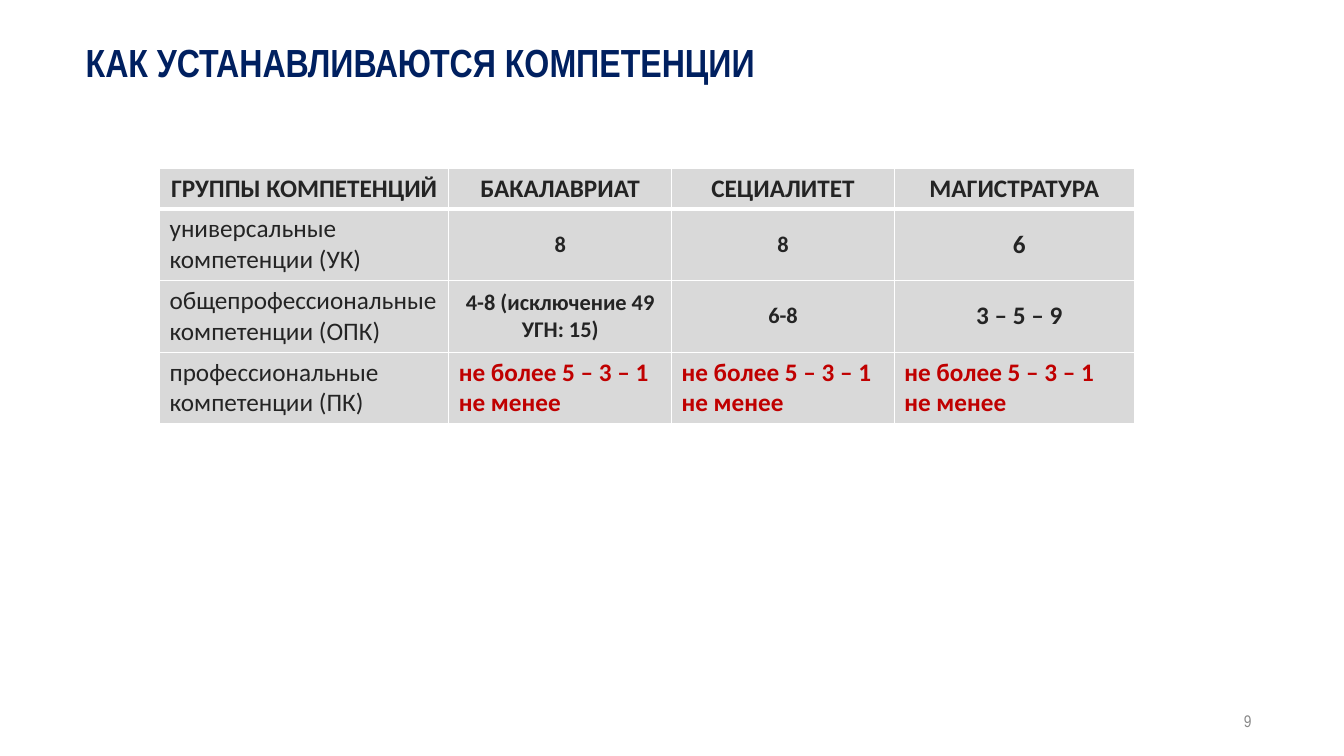
from dataclasses import dataclass
from typing import Any

from lxml.etree import SubElement
from pptx import Presentation
from pptx.dml.color import RGBColor
from pptx.enum.text import MSO_ANCHOR, MSO_AUTO_SIZE, PP_ALIGN
from pptx.oxml.ns import qn
from pptx.util import Emu, Inches, Pt

COLS, ROWS = 160, 90
WIDE = (34.44, 26.52, 26.52, 28.56)
HIGH = (4.8, 8.5, 8.5, 8.5)
LEFT, MID = PP_ALIGN.LEFT, PP_ALIGN.CENTER
DARK, RED, GREY, WHITE = "242424", "C00000", "D9D9D9", "FFFFFF"


@dataclass(frozen=True)
class Style:
    """Look of one line of text."""
    size: float = 18
    color: str = DARK
    bold: bool = True
    align: PP_ALIGN = LEFT
    face: str = "Calibri"


@dataclass(frozen=True)
class Item:
    """One table cell: its words, look, anchor and left inset in grid units."""
    text: str
    style: Style
    anchor: MSO_ANCHOR = MSO_ANCHOR.TOP
    inset: float = 1.2


HEAD = Style(align=MID)
GROUP = Style(bold=False)
COUNT = Style(size=16, align=MID)
LIMIT = Style(color=RED)


def span(units: float) -> Emu:
    """Turn grid units of a twelfth of an inch into a length."""
    return Inches(units / 12)


def tint(code: str) -> RGBColor:
    """Turn a hex string into a colour."""
    return RGBColor.from_string(code)


def apply(obj: Any, vals: dict[str, Any]) -> None:
    """Set every attribute named in the dict."""
    for name, val in vals.items():
        setattr(obj, name, val)


def write(frame: Any, text: str, style: Style) -> Any:
    """Put styled text in a frame and return its paragraph."""
    frame.text = text
    para = frame.paragraphs[0]
    para.alignment = style.align
    font = para.runs[0].font
    apply(font, {"size": Pt(style.size), "bold": style.bold, "name": style.face})
    font.color.rgb = tint(style.color)
    return para


def place(shape: Any, box: tuple[float, ...]) -> None:
    """Move and size a shape on the grid."""
    names = ("left", "top", "width", "height")
    apply(shape, {name: span(val) for name, val in zip(names, box)})


def edge(cell: Any, top: float, base: float) -> None:
    """Draw white borders round a cell."""
    props = cell._tc.get_or_add_tcPr()
    for side, pts in (("L", 1), ("R", 1), ("T", top), ("B", base)):
        line = SubElement(props, qn(f"a:ln{side}"), w=str(Pt(pts)))
        fill = SubElement(line, qn("a:solidFill"))
        SubElement(fill, qn("a:srgbClr"), val=WHITE)


def body() -> list[list[Item]]:
    """List the cells of the table by row."""
    mid = MSO_ANCHOR.MIDDLE
    heads = ("ГРУППЫ КОМПЕТЕНЦИЙ", "БАКАЛАВРИАТ", "СЕЦИАЛИТЕТ", "МАГИСТРАТУРА")
    counts = (
        ("универсальные компетенции (УК)", "8", "8", "6"),
        ("общепрофессиональные компетенции (ОПК)",
         "4-8 (исключение 49 УГН: 15)", "6-8", "3 – 5 – 9"),
    )
    rows = [[Item(text, HEAD) for text in heads]]
    for group, first, second, third in counts:
        rows.append([Item(group, GROUP), Item(first, COUNT, mid),
                     Item(second, COUNT, mid), Item(third, HEAD, mid, 2.4)])
    limit = Item("не более 5 – 3 – 1 не менее", LIMIT)
    rows.append([Item("профессиональные компетенции (ПК)", GROUP)] + [limit] * 3)
    return rows


def grid(slide: Any) -> None:
    """Add the table of competence groups."""
    table = slide.shapes.add_table(
        len(HIGH), len(WIDE), span(19), span(20),
        span(sum(WIDE)), span(sum(HIGH))).table
    apply(table, {"first_row": False, "horz_banding": False})
    for col, wide in zip(table.columns, WIDE):
        col.width = span(wide)
    for num, (row, high, items) in enumerate(zip(table.rows, HIGH, body())):
        row.height = span(high)
        for cell, item in zip(row.cells, items):
            write(cell.text_frame, item.text, item.style)
            edge(cell, 3 if num == 1 else 1, 3 if num == 0 else 1)
            cell.fill.solid()
            cell.fill.fore_color.rgb = tint(GREY)
            apply(cell, {"vertical_anchor": item.anchor,
                         "margin_left": span(item.inset)})


def main() -> None:
    """Build and save the slide."""
    deck = Presentation()
    apply(deck, {"slide_width": span(COLS), "slide_height": span(ROWS)})
    slide = deck.slides.add_slide(deck.slide_layouts[5])

    title = slide.shapes.title
    place(title, (9, 4, 144, 6.84))
    apply(title.text_frame, {"vertical_anchor": MSO_ANCHOR.TOP, "word_wrap": True,
                             "auto_size": MSO_AUTO_SIZE.NONE})
    write(title.text_frame, "КАК УСТАНАВЛИВАЮТСЯ КОМПЕТЕНЦИИ",
          Style(28, "002060", face="Arial Narrow"))

    grid(slide)

    page = slide.shapes.add_textbox(0, 0, 0, 0)
    place(page, (113, 84, 36, 3.84))
    apply(page.text_frame, {"vertical_anchor": MSO_ANCHOR.MIDDLE, "word_wrap": True,
                            "margin_left": 0, "margin_right": 0,
                            "margin_top": 0, "margin_bottom": 0})
    para = write(page.text_frame, "9",
                 Style(12, "888888", False, PP_ALIGN.RIGHT, "Arial Narrow"))
    para.line_spacing = Pt(13.2)
    deck.save("out.pptx")


if __name__ == "__main__":
    main()
